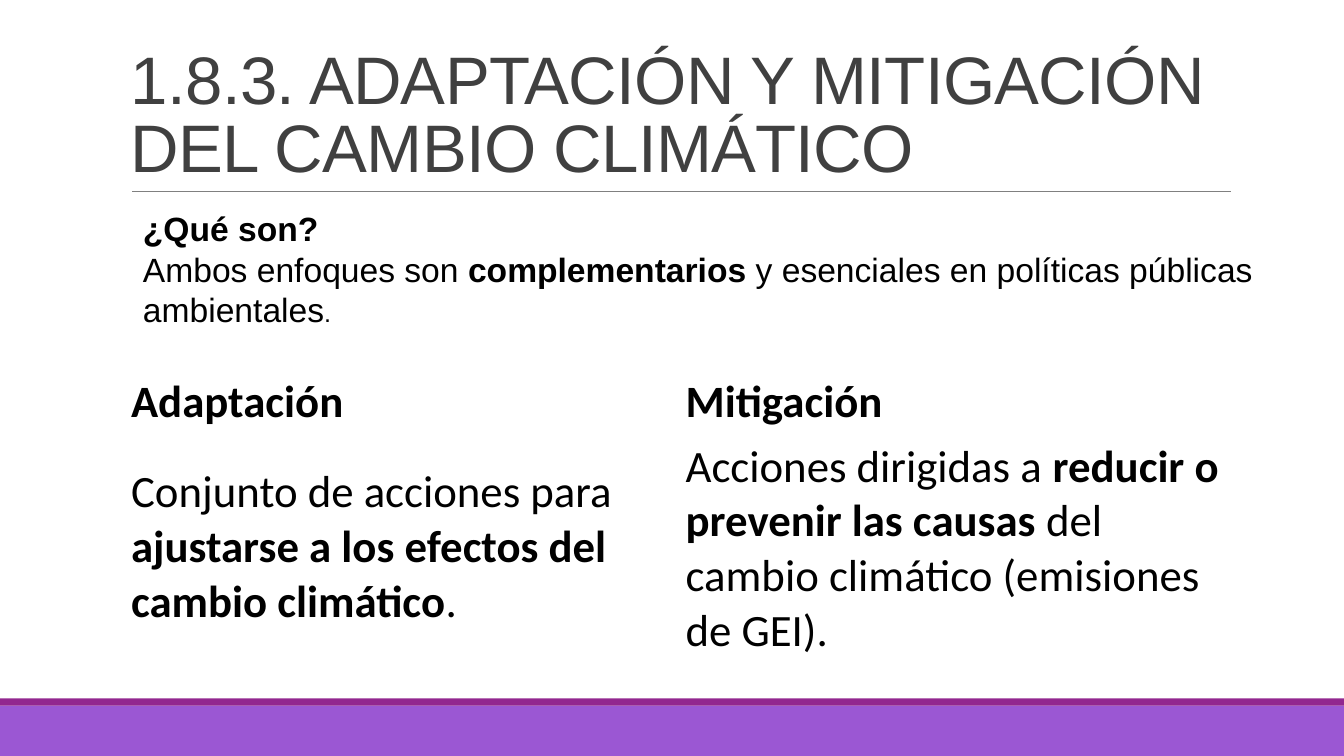
from dataclasses import dataclass

from lxml.etree import SubElement
from pptx import Presentation
from pptx.dml.color import RGBColor
from pptx.enum.shapes import MSO_CONNECTOR as Connector, MSO_SHAPE as Shape
from pptx.enum.text import MSO_ANCHOR as Anchor
from pptx.oxml.ns import qn
from pptx.slide import Slide
from pptx.text.text import TextFrame
from pptx.util import Inches, Pt

BLACK = "000000"


@dataclass
class Span:
    text: str
    bold: bool = False
    size: float | None = None


@dataclass
class Band:
    top: float
    height: float
    color: str


@dataclass
class Approach:
    name: str
    definition: list[Span]


BANDS = [Band(7, 0.5, "9B57D3"), Band(6.93, 0.07, "92278F")]

TITLE = [[Span("1.8.3. ADAPTACIÓN Y MITIGACIÓN\vDEL CAMBIO CLIMÁTICO")]]

INTRODUCTION = [
    [Span("¿Qué son?", bold=True)],
    [
        Span("Ambos enfoques son "),
        Span("complementarios", bold=True),
        Span(" y esenciales en políticas públicas ambientales"),
        Span(".", size=18),
    ],
]

APPROACHES = [
    Approach("Adaptación", [
        Span("Conjunto de acciones para "),
        Span("ajustarse a los efectos del cambio climático", bold=True),
        Span("."),
    ]),
    Approach("Mitigación", [
        Span("Acciones dirigidas a "),
        Span("reducir o prevenir las causas", bold=True),
        Span(" del cambio climático (emisiones de GEI)."),
    ]),
]


def rgb(color: str) -> RGBColor:
    return RGBColor.from_string(color)


def write_text(frame: TextFrame, paragraphs: list[list[Span]], *, font: str,
               size: float, color: str = BLACK, line_spacing: float | None = None,
               tracking: float | None = None) -> None:
    frame.word_wrap = True
    for index, spans in enumerate(paragraphs):
        paragraph = frame.add_paragraph() if index else frame.paragraphs[0]
        paragraph.line_spacing = line_spacing
        for span in spans:
            for position, line in enumerate(span.text.split("\v")):
                if position:
                    paragraph.add_line_break()
                run = paragraph.add_run()
                run.text = line
                run.font.name = font
                run.font.size = Pt(span.size or size)
                run.font.bold = span.bold
                run.font.color.rgb = rgb(color)
                if tracking is not None:
                    run.font._element.set("spc", str(int(tracking * 100)))


def add_text_box(slide: Slide, left: float, top: float, width: float,
                 height: float, anchor: Anchor) -> TextFrame:
    box = slide.shapes.add_textbox(*map(Inches, (left, top, width, height)))
    box.text_frame.vertical_anchor = anchor
    return box.text_frame


def add_band(slide: Slide, band: Band, width: int) -> None:
    stripe = slide.shapes.add_shape(
        Shape.RECTANGLE, 0, Inches(band.top), width, Inches(band.height))
    stripe.shadow.inherit = False
    stripe.fill.solid()
    stripe.fill.fore_color.rgb = rgb(band.color)
    stripe.line.fill.background()


def add_title_rule(slide: Slide) -> None:
    rule = slide.shapes.add_connector(
        Connector.STRAIGHT, *map(Inches, (1.31, 1.9, 12.21, 1.9)))
    rule.line.color.rgb = rgb("808080")
    rule.line.width = Pt(0.5)
    SubElement(rule._element.spPr, qn("a:effectLst"))


def add_comparison(slide: Slide, approaches: list[Approach]) -> None:
    table = slide.shapes.add_table(
        2, len(approaches), *map(Inches, (1.2, 3.67, 11, 2.87))).table
    table.first_row = False
    table.horz_banding = False
    for row, height in zip(table.rows, (0.64, 2.23)):
        row.height = Inches(height)
    for column, approach in enumerate(approaches):
        contents = [[Span(approach.name, bold=True)], approach.definition]
        for row, spans in enumerate(contents):
            cell = table.cell(row, column)
            cell.fill.background()
            cell.vertical_anchor = Anchor.MIDDLE
            write_text(cell.text_frame, [spans], font="Calibri", size=32)


def main() -> None:
    presentation = Presentation()
    presentation.slide_width = Inches(13.33)
    presentation.slide_height = Inches(7.5)
    slide = presentation.slides.add_slide(presentation.slide_layouts[6])

    for band in BANDS:
        add_band(slide, band, presentation.slide_width)
    add_title_rule(slide)

    title = add_text_box(slide, 1.2, 0.31, 11, 1.59, Anchor.BOTTOM)
    write_text(title, TITLE, font="Arial", size=48, color="404040",
               line_spacing=0.85, tracking=-0.5)

    add_comparison(slide, APPROACHES)

    introduction = add_text_box(slide, 1.32, 2.01, 11.54, 1.31, Anchor.MIDDLE)
    write_text(introduction, INTRODUCTION, font="Arial", size=24)

    presentation.save("out.pptx")


if __name__ == "__main__":
    main()
